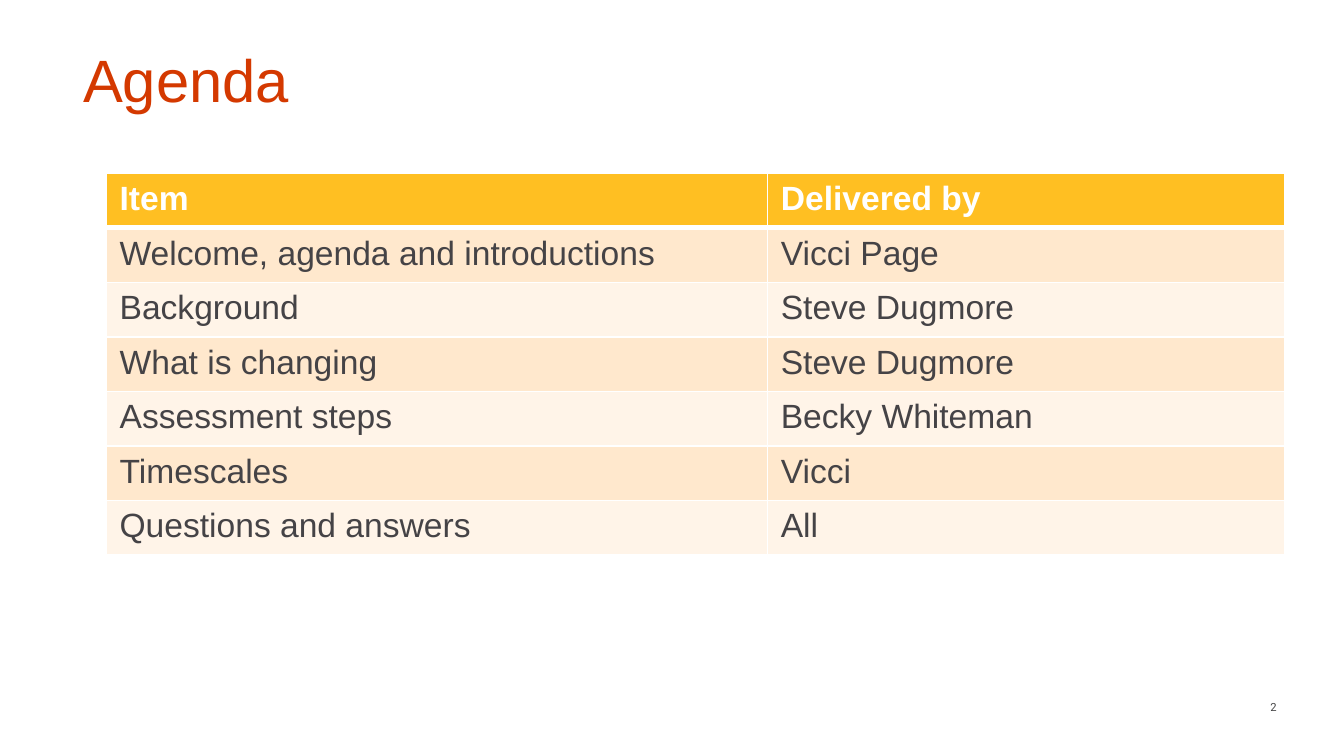
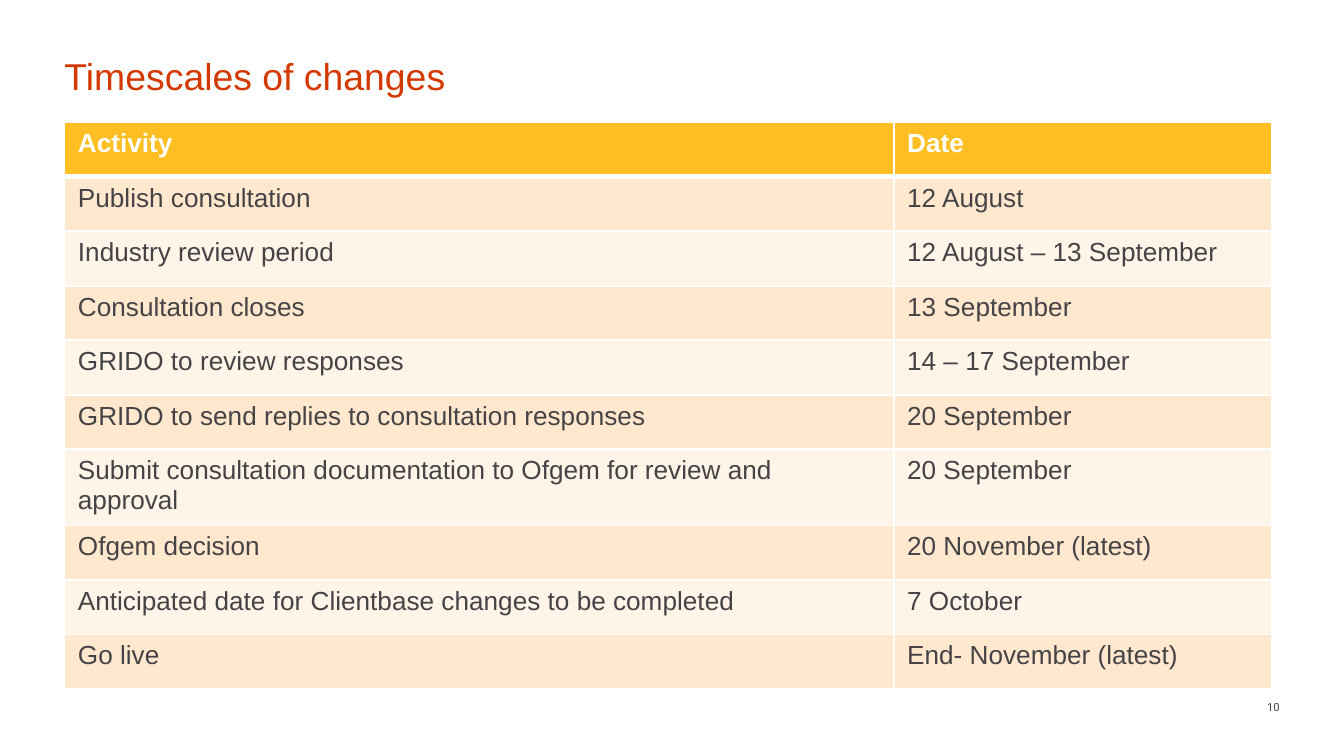
import lxml.etree
import pptx
import pptx.dml.color
import pptx.enum.text
import pptx.oxml.ns
import pptx.util

Inches = pptx.util.Inches
Pt = pptx.util.Pt

HUES = {
    "title": "D43900",
    "head": "FFBF22",
    "odd": "FFE8CD",
    "even": "FFF4E8",
    "text": "454346",
    "page": "454546",
    "white": "FFFFFF",
}
ROW = 2.84 / 7

AGENDA = [
    ("Item", "Delivered by"),
    ("Welcome, agenda and introductions", "Vicci Page"),
    ("Background", "Steve Dugmore"),
    ("What is changing", "Steve Dugmore"),
    ("Assessment steps", "Becky Whiteman"),
    ("Timescales", "Vicci"),
    ("Questions and answers", "All"),
]
DATES = [
    ("Activity", "Date"),
    ("Publish consultation", "12 August"),
    ("Industry review period", "12 August – 13 September"),
    ("Consultation closes", "13 September"),
    ("GRIDO to review responses", "14 – 17 September"),
    ("GRIDO to send replies to consultation responses", "20 September"),
    ("Submit consultation documentation to Ofgem for review and approval", "20 September"),
    ("Ofgem decision", "20 November (latest)"),
    ("Anticipated date for Clientbase changes to be completed", "7 October"),
    ("Go live", "End- November (latest)"),
]


def color(name):
    """Return the named hue as a colour."""
    return pptx.dml.color.RGBColor.from_string(HUES[name])


def style(para, size, hue, face="Arial", bold=False):
    """Format every run of a paragraph."""
    for run in para.runs:
        run.font.name = face
        run.font.size = Pt(size)
        run.font.bold = bold
        run.font.color.rgb = color(hue)


def add_text(slide, text, spot, pad):
    """Add a wrapping text box and return it with its paragraph."""
    box = slide.shapes.add_textbox(*map(Inches, spot))
    frame = box.text_frame
    frame.word_wrap = True
    frame.auto_size = pptx.enum.text.MSO_AUTO_SIZE.SHAPE_TO_FIT_TEXT
    (frame.margin_left, frame.margin_top,
     frame.margin_right, frame.margin_bottom) = map(Inches, pad)
    frame.text = text
    return box, frame.paragraphs[0]


def add_title(slide, text, spot, size, pad):
    """Add the slide title."""
    para = add_text(slide, text, spot, pad)[1]
    para.line_spacing = 1.5
    style(para, size, "title")


def add_page(slide, number):
    """Add the page number, set upright in a turned box."""
    box, para = add_text(slide, str(number), (9.43, 5.18, 0.1, 0.16), (0, 0.01, 0, 0))
    box.rotation = 90
    body = box.text_frame._txBody.find(pptx.oxml.ns.qn("a:bodyPr"))
    body.set("vert", "vert270")
    para.alignment = pptx.enum.text.PP_ALIGN.CENTER
    style(para, 6, "page", "Roboto")


def add_edge(cell, edges):
    """Draw white cell borders from pairs of tag and width."""
    props = cell._tc.get_or_add_tcPr()
    for spot, (tag, width) in enumerate(edges):
        line = lxml.etree.Element(pptx.oxml.ns.qn(tag), w=str(int(Pt(width))))
        fill = lxml.etree.SubElement(line, pptx.oxml.ns.qn("a:solidFill"))
        lxml.etree.SubElement(fill, pptx.oxml.ns.qn("a:srgbClr"), val=HUES["white"])
        props.insert(spot, line)


def add_grid(slide, rows, left, top, widths, size):
    """Add a banded table whose first row is the header."""
    spot = map(Inches, (left, top, sum(widths), ROW * len(rows)))
    grid = slide.shapes.add_table(len(rows), len(widths), *spot).table
    for col, width in zip(grid.columns, widths):
        col.width = Inches(width)
    for r, row in enumerate(rows):
        grid.rows[r].height = Inches(ROW)
        band = "head" if r == 0 else "odd" if r % 2 else "even"
        edges = [("a:lnL", 1), ("a:lnR", 1),
                 ("a:lnT", 3 if r == 1 else 1), ("a:lnB", 3 if r == 0 else 1)]
        for c, text in enumerate(row):
            cell = grid.cell(r, c)
            cell.text_frame.text = text
            style(cell.text_frame.paragraphs[0], size,
                  "text" if r else "white", bold=r == 0)
            cell.fill.solid()
            cell.fill.fore_color.rgb = color(band)
            add_edge(cell, edges)


def add_slide(deck, number):
    """Add a blank slide with its page number."""
    slide = deck.slides.add_slide(deck.slide_layouts[6])
    add_page(slide, number)
    return slide


def main():
    """Build and save both slides."""
    deck = pptx.Presentation()
    deck.slide_width = Inches(10)
    deck.slide_height = Inches(10 * 9 / 16)

    slide = add_slide(deck, 2)
    add_grid(slide, AGENDA, 0.79, 1.29, (4.92, 3.85), 18)
    add_title(slide, "Agenda", (0.52, 0, 4.86, 0.81), 32, (0.1, 0.05, 0.1, 0.05))

    slide = add_slide(deck, 10)
    add_title(slide, "Timescales of changes", (0.48, 0.23, 7.16, 0.44), 20, (0, 0, 0, 0))
    add_grid(slide, DATES, 0.48, 0.91, (6.17, 2.81), 14)

    deck.save("out.pptx")


if __name__ == "__main__":
    main()
